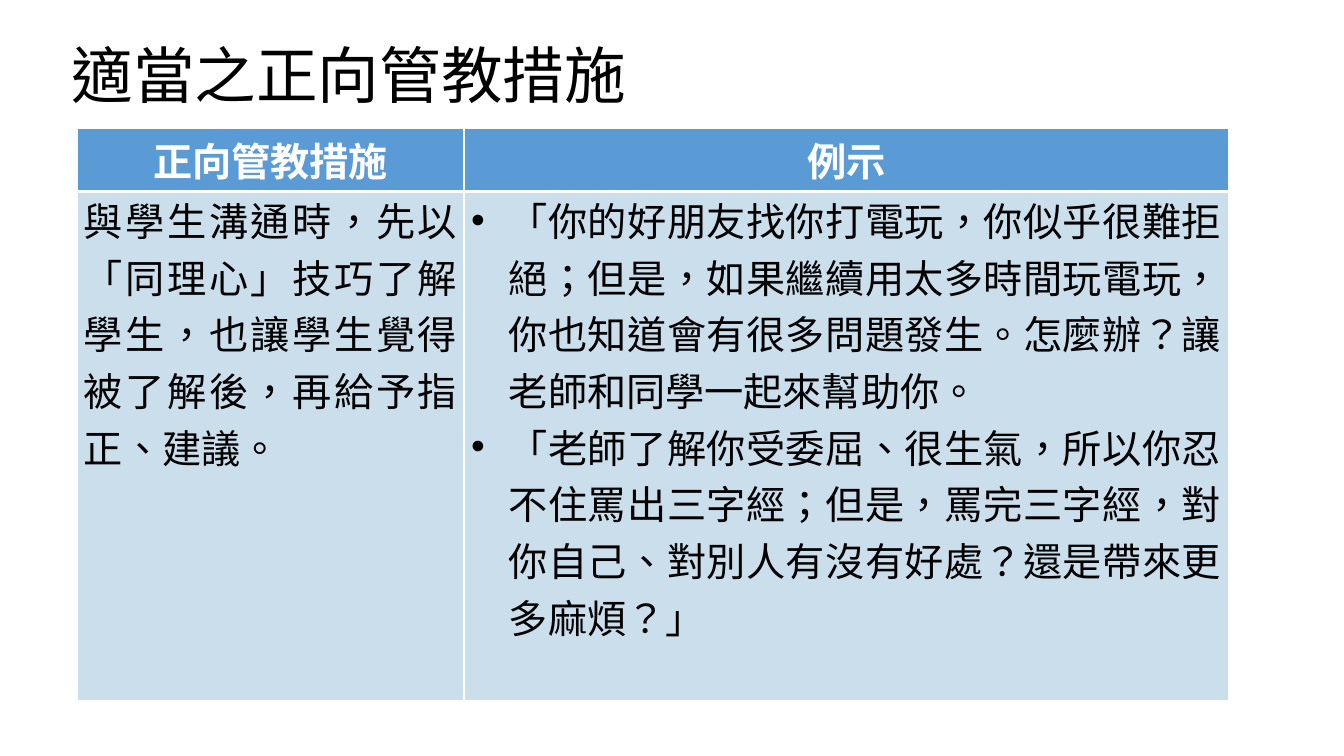
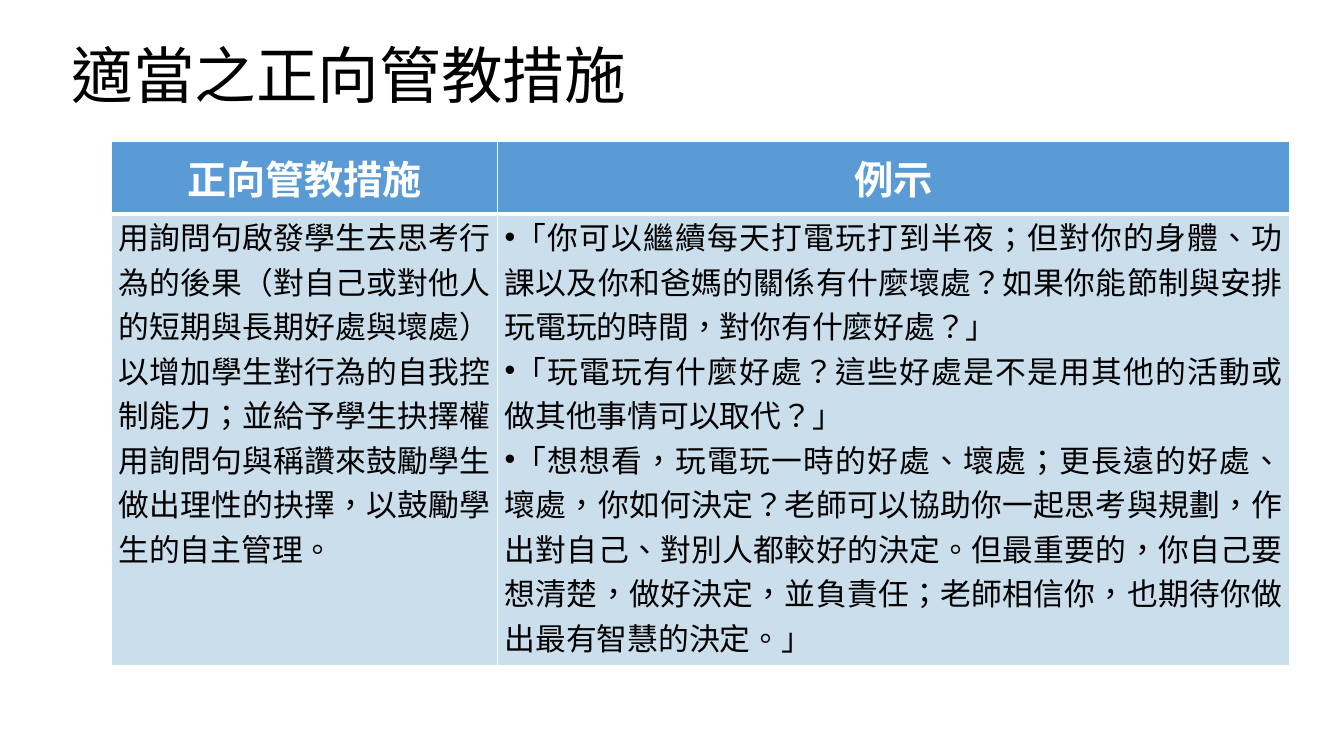
from dataclasses import dataclass

from lxml import etree
from pptx import Presentation
from pptx.dml.color import RGBColor
from pptx.enum.text import MSO_ANCHOR, MSO_AUTO_SIZE, PP_ALIGN
from pptx.oxml.ns import qn
from pptx.util import Pt

LEFT, CENTER, JUSTIFY = PP_ALIGN.LEFT, PP_ALIGN.CENTER, PP_ALIGN.JUSTIFY
TOP, MIDDLE = MSO_ANCHOR.TOP, MSO_ANCHOR.MIDDLE
BLACK, WHITE, BLUE, PALE = "000000", "FFFFFF", "5B9BD5", "CBDEEC"
CJK, TITLE_FONT, SERIF = "Noto Sans CJK SC", "Calibri", "Times New Roman"
TITLE = "適當之正向管教措施"
HEADINGS = ("正向管教措施", "例示")
CELL_INSET = 5


@dataclass(frozen=True)
class Measure:
    left: float
    top: float
    cols: tuple[float, float]
    rows: tuple[float, float]
    size: float
    font: str
    hang: float
    advice: str
    examples: tuple[str, ...]


MEASURES = (
    Measure(
        55, 91.5, (276.5, 546), (45.2, 364), 28, CJK, 27,
        "與學生溝通時，先以「同理心」技巧了解學生，也讓學生覺得被了解後，再給予指正、建議。",
        (
            "「你的好朋友找你打電玩，你似乎很難拒絕；但是，如果繼續用太多時間玩電玩，"
            "你也知道會有很多問題發生。怎麼辦？讓老師和同學一起來幫助你。",
            "「老師了解你受委屈、很生氣，所以你忍不住罵出三字經；但是，罵完三字經，"
            "對你自己、對別人有沒有好處？還是帶來更多麻煩？」",
        ),
    ),
    Measure(
        79.5, 100.8, (276, 566), (52.2, 322.4), 22, SERIF, 0,
        "用詢問句啟發學生去思考行為的後果（對自己或對他人的短期與長期好處與壞處），"
        "以增加學生對行為的自我控制能力；並給予學生抉擇權，"
        "用詢問句與稱讚來鼓勵學生做出理性的抉擇，以鼓勵學生的自主管理。",
        (
            "「你可以繼續每天打電玩打到半夜；但對你的身體、功課以及你和爸媽的關係有什麼壞處？"
            "如果你能節制與安排玩電玩的時間，對你有什麼好處？」",
            "「玩電玩有什麼好處？這些好處是不是用其他的活動或做其他事情可以取代？」",
            "「想想看，玩電玩一時的好處、壞處；更長遠的好處、壞處，你如何決定？"
            "老師可以協助你一起思考與規劃，作出對自己、對別人都較好的決定。"
            "但最重要的，你自己要想清楚，做好決定，並負責任；"
            "老師相信你，也期待你做出最有智慧的決定。」",
        ),
    ),
)


def rgb(color: str) -> RGBColor:
    return RGBColor.from_string(color)


def write(tf, *texts: str, size: float, font: str, color: str = BLACK,
          bold: bool = False, align=LEFT, bullet: bool = False, hang: float = 0) -> None:
    for i, text in enumerate(texts):
        p = tf.add_paragraph() if i else tf.paragraphs[0]
        p.alignment = align
        pPr = p._p.get_or_add_pPr()
        pPr.set("hangingPunct", "1")
        if bullet:
            pPr.set("marL", str(Pt(hang)))
            pPr.set("indent", str(-Pt(hang)))
            etree.SubElement(pPr, qn("a:buFont"), typeface="Arial")
            etree.SubElement(pPr, qn("a:buChar"), char="•")
        r = p.add_run()
        r.text = text
        r.font.size = Pt(size)
        r.font.bold = bold
        r.font.color.rgb = rgb(color)
        r.font.name = font
        rPr = r._r.get_or_add_rPr()
        rPr.set("lang", "zh-TW")
        etree.SubElement(rPr, qn("a:ea"), typeface=CJK)


def style_cell(cell, fill: str, anchor, top: float, bottom: float) -> None:
    tcPr = cell._tc.get_or_add_tcPr()
    for side, width in (("L", 1), ("R", 1), ("T", top), ("B", bottom)):
        ln = etree.SubElement(tcPr, qn(f"a:ln{side}"), w=str(Pt(width)))
        solid = etree.SubElement(ln, qn("a:solidFill"))
        etree.SubElement(solid, qn("a:srgbClr"), val=WHITE)
    cell.fill.solid()
    cell.fill.fore_color.rgb = rgb(fill)
    cell.vertical_anchor = anchor
    cell.margin_left = cell.margin_right = Pt(CELL_INSET)
    cell.margin_top = cell.margin_bottom = 0


def add_title(s) -> None:
    tf = s.shapes.add_textbox(Pt(44), Pt(23), Pt(415), Pt(60.5)).text_frame
    tf.word_wrap = False
    tf.auto_size = MSO_AUTO_SIZE.SHAPE_TO_FIT_TEXT
    write(tf, TITLE, size=44, font=TITLE_FONT)


def add_measure_table(s, m: Measure) -> None:
    table = s.shapes.add_table(
        2, 2, Pt(m.left), Pt(m.top), Pt(sum(m.cols)), Pt(sum(m.rows))).table
    for col, width in zip(table.columns, m.cols):
        col.width = Pt(width)
    for row, height in zip(table.rows, m.rows):
        row.height = Pt(height)
    for c, heading in enumerate(HEADINGS):
        head, body = table.cell(0, c), table.cell(1, c)
        style_cell(head, BLUE, MIDDLE, top=1, bottom=3)
        style_cell(body, PALE, TOP, top=3, bottom=1)
        write(head.text_frame, heading, size=28, font=CJK, color=WHITE,
              bold=True, align=CENTER)
    advice, examples = (table.cell(1, c).text_frame for c in range(2))
    write(advice, m.advice, size=m.size, font=m.font, align=JUSTIFY)
    write(examples, *m.examples, size=m.size, font=m.font, align=JUSTIFY,
          bullet=True, hang=m.hang)


def main() -> None:
    prs = Presentation()
    prs.slide_width, prs.slide_height = Pt(960), Pt(540)
    for m in MEASURES:
        s = prs.slides.add_slide(prs.slide_layouts[6])
        add_title(s)
        add_measure_table(s, m)
    prs.save("out.pptx")


if __name__ == "__main__":
    main()
